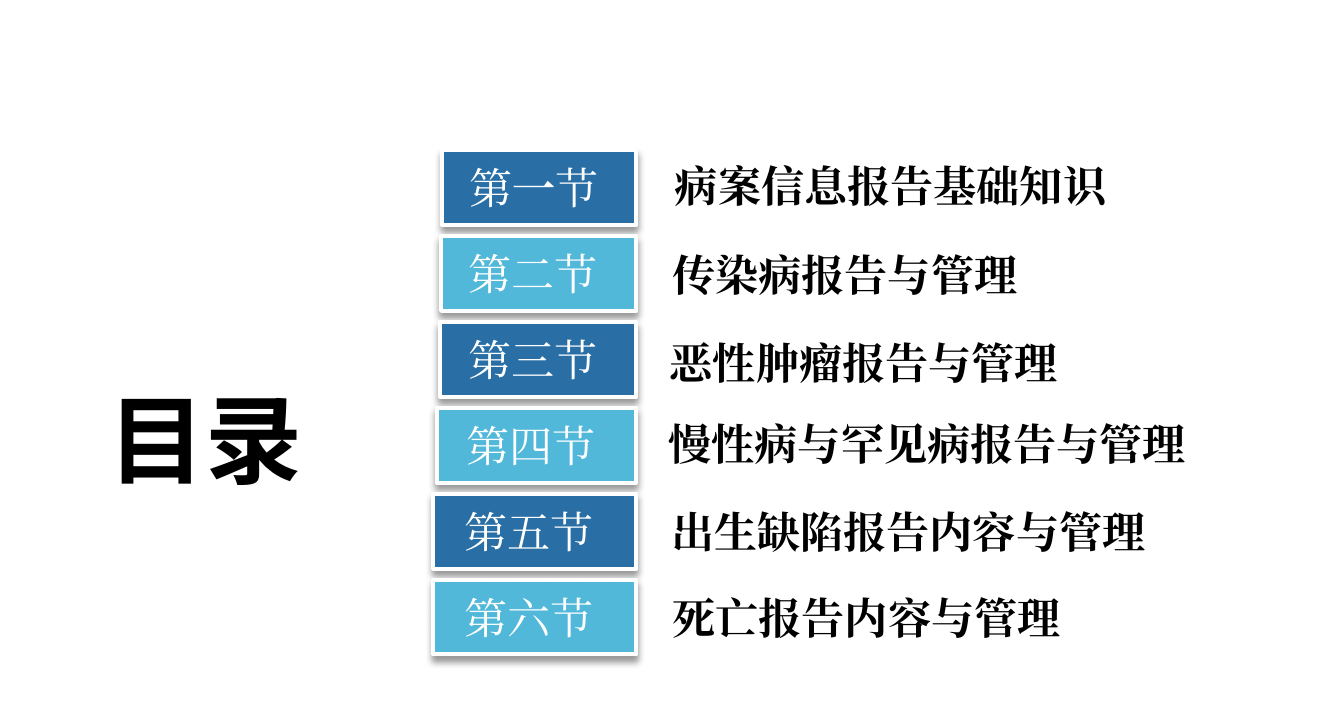
"""Build a contents slide with six numbered sections."""
from dataclasses import dataclass

from lxml import etree
from pptx import Presentation
from pptx.dml.color import RGBColor
from pptx.enum.lang import MSO_LANGUAGE_ID
from pptx.enum.shapes import MSO_SHAPE
from pptx.enum.text import MSO_ANCHOR, MSO_AUTO_SIZE, PP_ALIGN
from pptx.oxml.ns import qn
from pptx.util import Inches, Pt

RECT = MSO_SHAPE.RECTANGLE
TOP, MIDDLE = MSO_ANCHOR.TOP, MSO_ANCHOR.MIDDLE
GROW = MSO_AUTO_SIZE.SHAPE_TO_FIT_TEXT
LEFT, CENTER = PP_ALIGN.LEFT, PP_ALIGN.CENTER
CHINESE = MSO_LANGUAGE_ID.SIMPLIFIED_CHINESE


@dataclass(frozen=True)
class Theme:
    """Colours, fonts and type sizes of the slide."""
    ink: RGBColor = RGBColor(0, 0, 0)
    white: RGBColor = RGBColor(255, 255, 255)
    fills: tuple = (RGBColor(0x29, 0x6F, 0xA5), RGBColor(0x52, 0xB8, 0xDA))
    head: str = "Noto Sans CJK SC"
    body: str = "Times New Roman"
    big: int = 54
    small: int = 24


@dataclass(frozen=True)
class Section:
    """Badge runs and topic of one section, with the places of both."""
    badge: tuple
    edge: float
    topic: str
    left: float
    top: float
    width: float
    wrap: bool = True


THEME = Theme()
FIRST, LAST = 1.16, 4.48
RIGHT, HIGH = 4.92, 0.58
SECTIONS = (
    Section(("第", "一", "节 "), 3.42, "病案信息报告基础知识", 5.12, 1.18, 3.64),
    Section(("第二节 ",), 3.41, "传染病报告与管理", 5.1, 1.87, 3.3),
    Section(("第三节 ",), 3.4, "恶性肿瘤报告与管理", 5.08, 2.55, 3.3),
    Section(("第四节 ",), 3.38, "慢性病与罕见病报告与管理", 5.07, 3.18, 4.41),
    Section(("第五节 ",), 3.35, "出生缺陷报告内容与管理", 5.09, 3.86, 3.92, False),
    Section(("第六节 ",), 3.35, "死亡报告内容与管理", 5.1, 4.52, 3.25, False),
)


def apply(target, values: dict) -> None:
    """Set each named attribute on the target."""
    for name, value in values.items():
        setattr(target, name, value)


def write(shape, text: str, size: int, face: str, color: RGBColor, bold: bool) -> None:
    """Add a formatted run to the first paragraph of a shape."""
    run = shape.text_frame.paragraphs[0].add_run()
    run.text = text
    apply(run.font, {"size": Pt(size), "name": face, "bold": bold,
                     "language_id": CHINESE})
    run.font.color.rgb = color
    east = etree.Element(qn("a:ea"), typeface=face)
    run.font._element.find(qn("a:latin")).addnext(east)


def shade(shape) -> None:
    """Give a shape a soft shadow straight below it."""
    shape.shadow.inherit = False
    effects = shape._element.spPr.find(qn("a:effectLst"))
    outer = etree.SubElement(effects, qn("a:outerShdw"), blurRad=str(Pt(4)),
                             dist=str(Pt(3)), dir="5400000", rotWithShape="0")
    black = etree.SubElement(outer, qn("a:srgbClr"), val=str(THEME.ink))
    etree.SubElement(black, qn("a:alpha"), val="40000")


def draw_title(slide) -> None:
    """Place the slide heading."""
    title = slide.shapes.title
    apply(title, {"left": Inches(0.74), "top": Inches(2.88),
                  "width": Inches(1.79), "height": Inches(1.01)})
    apply(title.text_frame, {"word_wrap": False, "auto_size": GROW,
                             "vertical_anchor": TOP})
    title.text_frame.paragraphs[0].alignment = LEFT
    write(title, "目录", THEME.big, THEME.head, THEME.ink, True)


def draw_badge(slide, item: Section, top: float, fill: RGBColor) -> None:
    """Draw the coloured box with the section number."""
    box = slide.shapes.add_shape(RECT, Inches(item.edge), Inches(top),
                                 Inches(RIGHT - item.edge), Inches(HIGH))
    box.fill.solid()
    box.fill.fore_color.rgb = fill
    box.line.color.rgb = THEME.white
    box.line.width = Pt(2.25)
    shade(box)
    box.text_frame.vertical_anchor = MIDDLE
    box.text_frame.paragraphs[0].alignment = CENTER
    for place, text in enumerate(item.badge):
        write(box, text, THEME.small, THEME.body, THEME.white, place == 1)


def draw_topic(slide, item: Section) -> None:
    """Write the section topic beside its badge."""
    box = slide.shapes.add_textbox(Inches(item.left), Inches(item.top),
                                   Inches(item.width), Inches(0.5))
    apply(box.text_frame, {"word_wrap": item.wrap, "auto_size": GROW})
    write(box, item.topic, THEME.small, THEME.body, THEME.ink, True)


def main() -> None:
    """Build and save the slide."""
    deck = Presentation()
    apply(deck, {"slide_width": Inches(10.39), "slide_height": Inches(5.62)})
    slide = deck.slides.add_slide(deck.slide_layouts.get_by_name("Title Only"))
    draw_title(slide)
    step = (LAST - FIRST) / (len(SECTIONS) - 1)
    for row, item in enumerate(SECTIONS):
        draw_badge(slide, item, FIRST + row * step, THEME.fills[row % 2])
        draw_topic(slide, item)
    deck.save("out.pptx")


if __name__ == "__main__":
    main()
